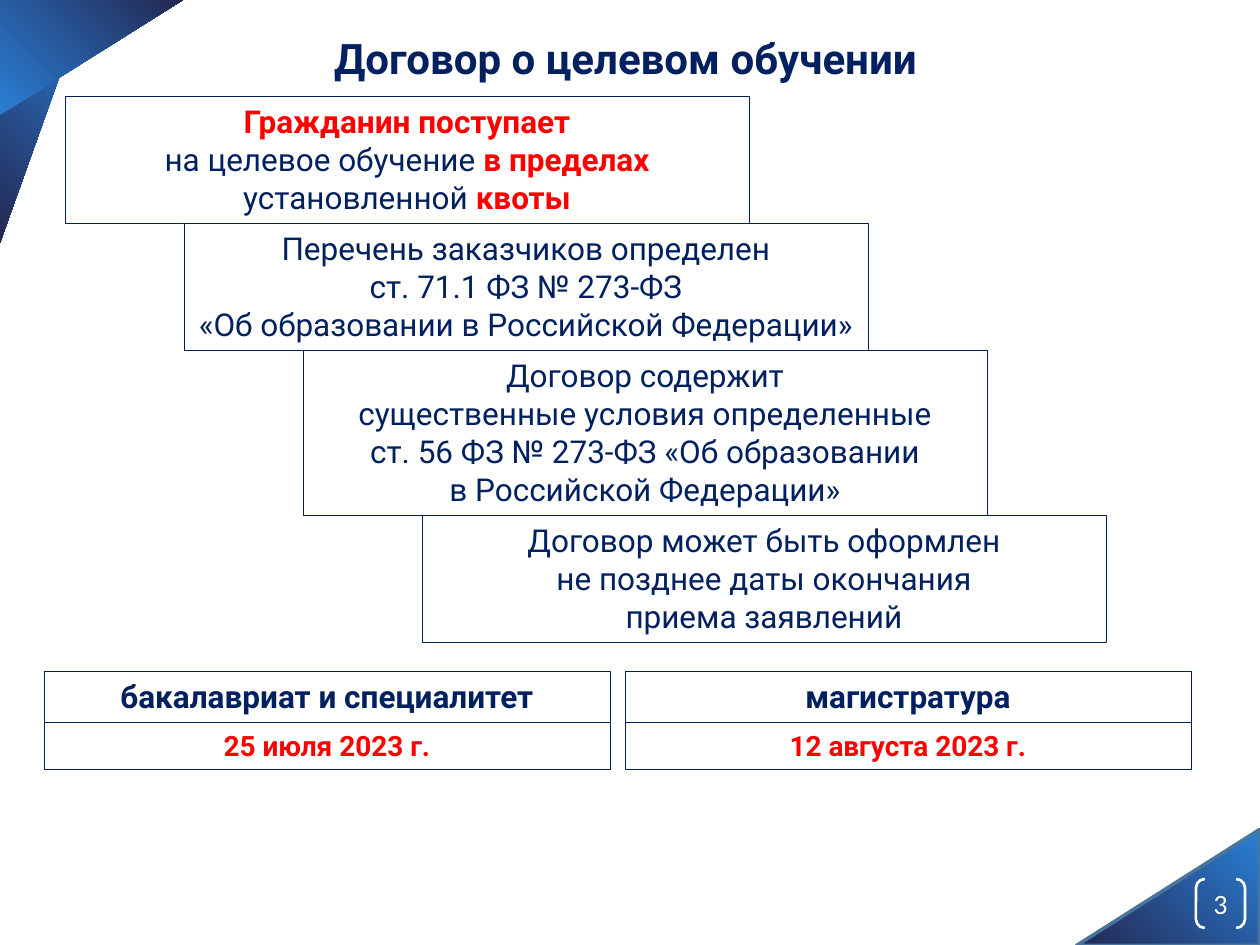
from dataclasses import dataclass

from pptx import Presentation
from pptx.dml.color import RGBColor
from pptx.enum.shapes import MSO_SHAPE as Shape
from pptx.enum.text import MSO_ANCHOR as Anchor, MSO_AUTO_SIZE as AutoSize, PP_ALIGN as Align
from pptx.util import Pt

EMU_PER_PX = 914400 / 126


@dataclass(frozen=True)
class Theme:
    navy: str = "002060"
    outline: str = "002056"
    red: str = "FF0000"
    white: str = "FFFFFF"
    light_blue: str = "297FD5"
    dark_blue: str = "242852"
    corner_line: str = "49749B"
    font: str = "Roboto"
    number_font: str = "Calibri"
    title_size: int = 24
    body_size: int = 18
    small_size: int = 16


THEME = Theme()

# Each step: height and (text, emphasised) spans
STEPS = [
    (127, [("Гражданин поступает\n", True), ("на целевое обучение ", False),
           ("в пределах ", True), ("установленной ", False), ("квоты", True)]),
    (127, [("Перечень заказчиков определен\nст. 71.1 ФЗ № 273-ФЗ\n"
            "«Об образовании в Российской Федерации»", False)]),
    (165, [("Договор содержит\nсущественные условия определенные\n"
            "ст. 56 ФЗ № 273-ФЗ «Об образовании\nв Российской Федерации»", False)]),
    (127, [("Договор может быть оформлен\nне позднее даты окончания\n"
            "приема заявлений", False)]),
]
DEADLINES = [("бакалавриат и специалитет", "25 июля 2023 г."),
             ("магистратура", "12 августа 2023 г.")]


def px(value):
    return round(value * EMU_PER_PX)


def rgb(color):
    return RGBColor.from_string(color)


def set_font(font, size, color=None, bold=False, name=THEME.font):
    font.name, font.size, font.bold = name, Pt(size), bold
    if color:
        font.color.rgb = rgb(color)


def add_shape(slide, kind, left, top, width, height, line=None, line_width=0.25):
    shape = slide.shapes.add_shape(kind, px(left), px(top), px(width), px(height))
    shape.shadow.inherit = False
    if line:
        shape.line.color.rgb = rgb(line)
        shape.line.width = Pt(line_width)
    else:
        shape.line.fill.background()
    return shape


def add_corner(slide, left, top, width, height, rotation, flip=False, line=None):
    shape = add_shape(slide, Shape.RIGHT_TRIANGLE, left, top, width, height, line, 2)
    shape.rotation = rotation
    if flip:
        shape._element.spPr.xfrm.set("flipH", "1")
    shape.fill.gradient()
    shape.fill.gradient_angle = 135
    for stop, color in zip(shape.fill.gradient_stops, (THEME.light_blue, THEME.dark_blue)):
        stop.color.rgb = rgb(color)


def add_spans(paragraph, spans):
    for text, emphasised in spans:
        for index, line in enumerate(text.split("\n")):
            if index:
                paragraph.add_line_break()
            if line:
                run = paragraph.add_run()
                run.text = line
                run.font.bold = emphasised
                run.font.color.rgb = rgb(THEME.red if emphasised else THEME.navy)


def add_box(slide, left, top, width, height):
    """Add a thin outlined box and return its centred paragraph."""
    shape = add_shape(slide, Shape.RECTANGLE, left, top, width, height, THEME.outline)
    shape.fill.solid()
    shape.fill.fore_color.rgb = rgb(THEME.white)
    frame = shape.text_frame
    frame.word_wrap = True
    frame.vertical_anchor = Anchor.TOP
    frame.auto_size = AutoSize.SHAPE_TO_FIT_TEXT
    paragraph = frame.paragraphs[0]
    paragraph.alignment = Align.CENTER
    return paragraph


def add_label(slide, left, top, width, height, text, size, color):
    paragraph = add_box(slide, left, top, width, height)
    paragraph.text = text
    set_font(paragraph.font, size, color, bold=True)


def add_title(slide, text):
    title = slide.shapes.title
    title.left, title.top, title.width, title.height = px(35), px(26), px(1181), px(63)
    frame = title.text_frame
    frame.word_wrap = True
    frame.vertical_anchor = Anchor.TOP
    frame.auto_size = AutoSize.SHAPE_TO_FIT_TEXT
    paragraph = frame.paragraphs[0]
    paragraph.text = text
    paragraph.alignment = Align.CENTER
    set_font(paragraph.font, THEME.title_size, THEME.navy, bold=True)


def add_page_number(slide, number):
    shape = add_shape(slide, Shape.DOUBLE_BRACKET, 1196, 879, 49, 49, THEME.white, 1.5)
    shape.adjustments[0] = 0.18
    shape.fill.background()
    frame = shape.text_frame
    frame.margin_left = frame.margin_right = frame.margin_top = frame.margin_bottom = 0
    frame.vertical_anchor = Anchor.MIDDLE
    paragraph = frame.paragraphs[0]
    paragraph.text = number
    paragraph.alignment = Align.CENTER
    set_font(paragraph.font, THEME.small_size, THEME.white, name=THEME.number_font)


def main():
    presentation = Presentation()
    presentation.slide_width, presentation.slide_height = px(1260), px(945)
    slide = presentation.slides.add_slide(presentation.slide_layouts[5])

    # Corner decoration and page number
    add_corner(slide, 1110, 796, 116, 183, 270, line=THEME.corner_line)
    add_corner(slide, 0, 0, 87, 243, 180, flip=True)
    add_corner(slide, 34, -34, 115, 183, 90)
    add_page_number(slide, "3")

    add_title(slide, "Договор о целевом обучении")

    # Staircase of steps
    top = 96
    for index, (height, spans) in enumerate(STEPS):
        paragraph = add_box(slide, 65 + 119 * index, top, 684, height)
        add_spans(paragraph, spans)
        set_font(paragraph.font, THEME.body_size)
        top += height

    # Deadlines by level of study
    for index, (level, date) in enumerate(DEADLINES):
        left = 44 + 581 * index
        add_label(slide, left, 671, 566, 51, level, THEME.body_size, THEME.navy)
        add_label(slide, left, 722, 566, 47, date, THEME.small_size, THEME.red)

    presentation.save("out.pptx")


if __name__ == "__main__":
    main()
